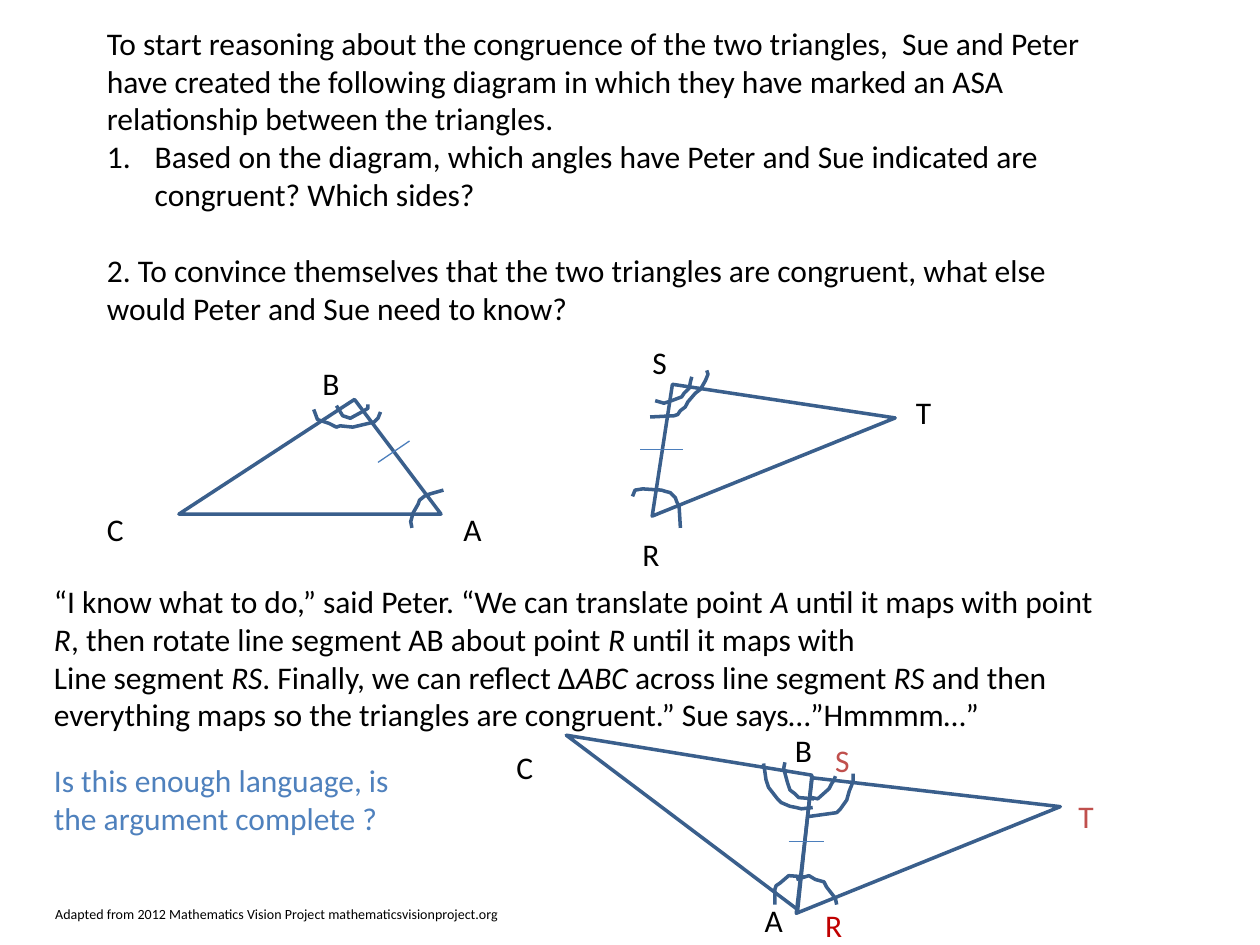
from dataclasses import dataclass

import pptx
import pptx.dml.color
import pptx.enum.shapes
import pptx.enum.text
import pptx.oxml.ns
import pptx.util
from lxml import etree

Inches = pptx.util.Inches
Pt = pptx.util.Pt
qn = pptx.oxml.ns.qn


@dataclass(frozen=True)
class Theme:
    font: str = "Calibri"
    body: int = 18
    credit: int = 8
    ink: str = "000000"
    outline: str = "3A5F8C"
    tick: str = "4B7EBC"
    question: str = "4F81BD"
    mapped: str = "C0504D"
    pivot: str = "C00000"
    outline_width: float = 2
    tick_width: float = 0.75


THEME = Theme()


def rgb(code):
    return pptx.dml.color.RGBColor.from_string(code)


def set_line(shape, color, width):
    shape.line.color.rgb = rgb(color)
    shape.line.width = Pt(width)


def number_paragraph(para):
    properties = para._p.get_or_add_pPr()
    properties.set("marL", str(Inches(0.38)))
    properties.set("indent", str(-Inches(0.38)))
    etree.SubElement(properties, qn("a:buFont")).set("typeface", "+mj-lt")
    etree.SubElement(properties, qn("a:buAutoNum")).set("type", "arabicPeriod")


def add_text(page, box, paragraphs, color=THEME.ink, size=THEME.body, numbered=()):
    shape = page.shapes.add_textbox(*map(Inches, box))
    frame = shape.text_frame
    frame.word_wrap = True
    frame.auto_size = pptx.enum.text.MSO_AUTO_SIZE.SHAPE_TO_FIT_TEXT
    for index, text in enumerate(paragraphs):
        para = frame.paragraphs[0] if index == 0 else frame.add_paragraph()
        if index in numbered:
            number_paragraph(para)
        para.font.name = THEME.font
        para.font.size = Pt(size)
        para.font.color.rgb = rgb(color)
        for part, words in enumerate(text.split("*")):
            if words:
                span = para.add_run()
                span.text = words
                if part % 2:
                    span.font.italic = True
    return frame


def add_triangle(page, left, top, box, apex, rotation=0):
    x, y, width, height = box
    shape = page.shapes.add_shape(
        pptx.enum.shapes.MSO_SHAPE.ISOSCELES_TRIANGLE,
        Inches(left + x), Inches(top + y), Inches(width), Inches(height))
    shape.adjustments[0] = apex
    shape.rotation = rotation
    shape.shadow.inherit = False
    shape.fill.background()
    set_line(shape, THEME.outline, THEME.outline_width)


def add_arc(page, left, top, points):
    start, *rest = [(Inches(left + x), Inches(top + y)) for x, y in points]
    builder = page.shapes.build_freeform(*start)
    builder.add_line_segments(rest, close=False)
    shape = builder.convert_to_shape()
    shape.shadow.inherit = False
    shape.fill.background()
    set_line(shape, THEME.outline, THEME.outline_width)


def add_tick(page, left, top, ends):
    (x1, y1), (x2, y2) = ends
    tick = page.shapes.add_connector(
        pptx.enum.shapes.MSO_CONNECTOR.STRAIGHT,
        Inches(left + x1), Inches(top + y1), Inches(left + x2), Inches(top + y2))
    set_line(tick, THEME.tick, THEME.tick_width)
    etree.SubElement(tick._element.spPr, qn("a:effectLst"))


def add_figure(page, left, top, triangles, arcs, tick, labels):
    for triangle in triangles:
        add_triangle(page, left, top, *triangle)
    for points in arcs:
        add_arc(page, left, top, points)
    add_tick(page, left, top, tick)
    for letter, x, y, width, color in labels:
        add_text(page, (left + x, top + y, width, 0.4), [letter], color)


def add_triangle_abc(page, left, top):
    angle_a = [(3.02, 1.39), (2.88, 1.43), (2.83, 1.47), (2.82, 1.5),
               (2.78, 1.57), (2.76, 1.64), (2.77, 1.69)]
    inner_b = [(2.17, 0.72), (2.22, 0.8), (2.28, 0.82), (2.39, 0.76),
               (2.42, 0.74), (2.42, 0.71)]
    outer_b = [(1.99, 0.75), (2.02, 0.83), (2.11, 0.86), (2.17, 0.89), (2.2, 0.88),
               (2.3, 0.89), (2.47, 0.85), (2.5, 0.82), (2.52, 0.77)]
    add_figure(page, left, top, [((0.92, 0.67, 2.08, 0.91), 0.67)],
               [angle_a, inner_b, outer_b], [(2.75, 1), (2.5, 1.17)],
               [("C", 0.25, 1.5, 0.42, THEME.ink),
                ("B", 1.96, 0.34, 0.38, THEME.ink),
                ("A", 3.08, 1.5, 0.42, THEME.ink)])


def add_triangle_rst(page, left, top):
    angle_r = [(0.52, 1.44), (0.54, 1.39), (0.6, 1.38), (0.75, 1.39), (0.78, 1.4),
               (0.82, 1.41), (0.86, 1.45), (0.87, 1.48), (0.89, 1.52), (0.9, 1.69)]
    inner_s = [(0.7, 0.68), (0.77, 0.7), (0.83, 0.68), (0.91, 0.65),
               (0.93, 0.62), (0.97, 0.58), (0.98, 0.53), (0.99, 0.49)]
    outer_s = [(0.66, 0.81), (0.85, 0.8), (0.88, 0.79), (0.9, 0.76), (0.94, 0.73),
               (0.96, 0.69), (1.02, 0.62), (1.06, 0.59), (1.1, 0.52), (1.12, 0.47),
               (1.11, 0.44)]
    add_figure(page, left, top, [((0.43, 0.33, 2.08, 0.91), 0.26, 338)],
               [angle_r, inner_s, outer_s], [(0.58, 1.07), (0.92, 1.07)],
               [("R", 0.5, 1.7, 0.42, THEME.ink),
                ("S", 0.58, 0.17, 0.34, THEME.ink),
                ("T", 2.67, 0.57, 0.42, THEME.ink)])


def add_joined_triangles(page, left, top):
    inner_b = [(2.23, 0.55), (2.22, 0.6), (2.25, 0.71), (2.26, 0.74), (2.27, 0.77),
               (2.31, 0.8), (2.34, 0.83), (2.46, 0.84)]
    outer_b = [(2.06, 0.56), (2.07, 0.62), (2.08, 0.69), (2.1, 0.75), (2.17, 0.84),
               (2.2, 0.87), (2.27, 0.9), (2.32, 0.91), (2.36, 0.92), (2.45, 0.91)]
    angle_r = [(2.32, 1.48), (2.42, 1.45), (2.47, 1.48), (2.54, 1.5), (2.56, 1.54),
               (2.63, 1.63), (2.64, 1.68)]
    angle_a = [(2.15, 1.68), (2.15, 1.56), (2.16, 1.53), (2.19, 1.51),
               (2.26, 1.45), (2.39, 1.46)]
    inner_s = [(2.44, 0.83), (2.49, 0.84), (2.58, 0.76), (2.6, 0.72),
               (2.62, 0.69), (2.63, 0.66)]
    outer_s = [(2.42, 0.98), (2.64, 0.95), (2.67, 0.92), (2.72, 0.85),
               (2.74, 0.78), (2.76, 0.73), (2.77, 0.7), (2.77, 0.64)]
    add_figure(page, left, top,
               [((2.06, 0.41, 2.26, 0.95), 0.23, 338),
                ((0.54, 0.2, 2.3, 0.92), 0.76, 37)],
               [inner_b, outer_b, angle_r, angle_a, inner_s, outer_s],
               [(2.26, 1.18), (2.54, 1.18)],
               [("A", 1.97, 1.6, 0.42, THEME.ink),
                ("C", 0, 0.39, 0.42, THEME.ink),
                ("B", 2.21, 0.25, 0.38, THEME.ink),
                ("T", 4.46, 0.78, 0.42, THEME.mapped),
                ("R", 2.45, 1.64, 0.42, THEME.pivot),
                ("S", 2.53, 0.33, 0.34, THEME.mapped)])


def add_questions(page, box):
    frame = add_text(page, box, [
        "To start reasoning about the congruence of the two triangles,  Sue and Peter have created the following diagram in which they have marked an ASA relationship between the triangles.",
        "Based on the diagram, which angles have Peter and Sue indicated are congruent? Which sides?",
        "2. To convince themselves that the two triangles are congruent, what else would Peter and Sue need to know?",
    ], numbered=(1,))
    frame.paragraphs[2].space_before = Pt(22)


def add_argument(page, box):
    add_text(page, box, [
        "“I know what to do,” said Peter. “We can translate point *A *until it maps with point *R*, then rotate line segment AB about point *R *until it maps with",
        "Line segment *RS*. Finally, we can reflect Δ*ABC *across line segment *RS *and then",
        "everything maps so the triangles are congruent.” Sue says…”Hmmmm…”",
    ])


def main():
    deck = pptx.Presentation()
    deck.slide_width, deck.slide_height = Inches(10), Inches(7.5)
    page = deck.slides.add_slide(deck.slide_layouts[6])
    add_questions(page, (0.75, 0.14, 8, 2.52))
    add_triangle_abc(page, 0.5, 2.5)
    add_triangle_rst(page, 4.5, 2.5)
    add_argument(page, (0.33, 4.57, 8.58, 1.31))
    add_joined_triangles(page, 4, 5.5)
    add_text(page, (0.33, 5.99, 2.93, 0.71),
             ["Is this enough language, is the argument complete ?"], THEME.question)
    add_text(page, (0.34, 7.14, 4.24, 0.24),
             ["Adapted from 2012 Mathematics Vision Project mathematicsvisionproject.org"],
             size=THEME.credit)
    deck.save("out.pptx")


if __name__ == "__main__":
    main()
